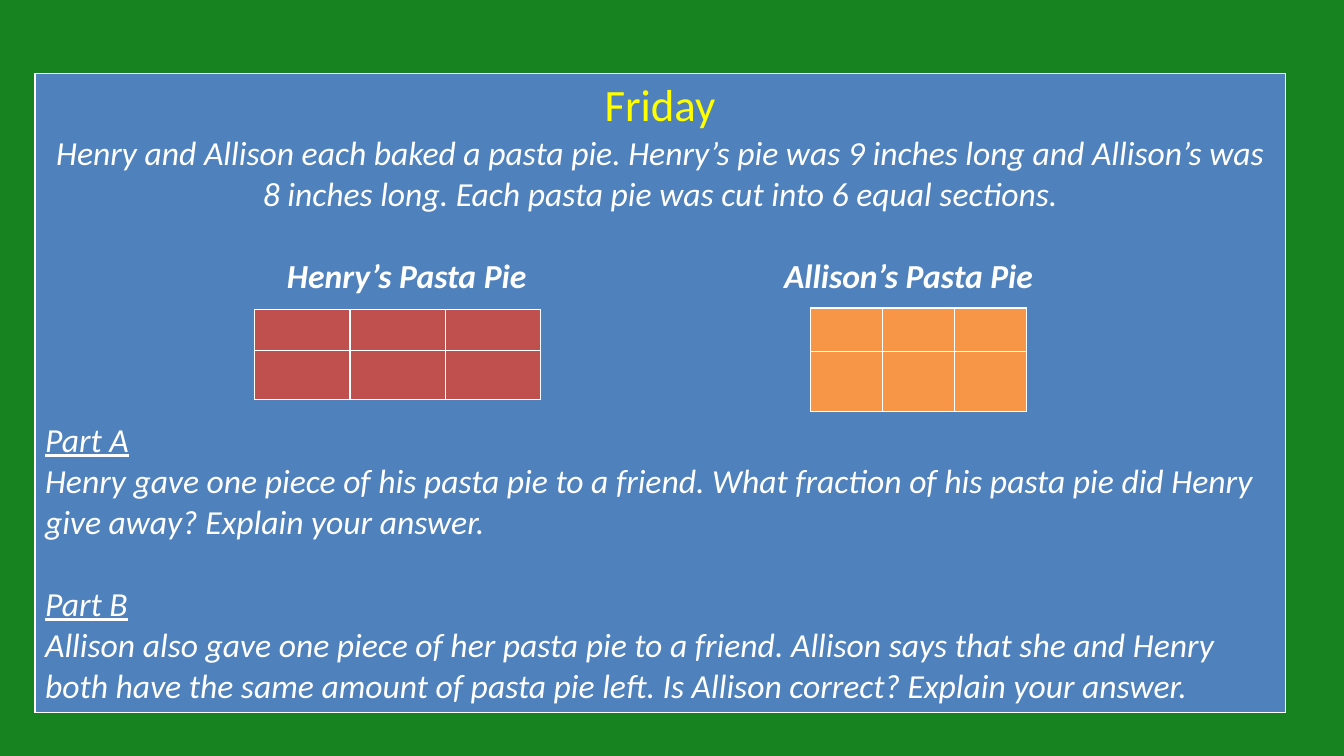
from lxml import etree
from pptx import Presentation
from pptx.dml.color import RGBColor
from pptx.enum import text
from pptx.oxml import ns
from pptx.util import Pt

COLORS = {
    "background": "168220",
    "panel": "4F81BD",
    "title": "FFFF00",
    "white": "FFFFFF",
    "henry": "C0504D",
    "allison": "F79646",
}
FONT = "Calibri"
LINE = 29.3  # height of one line of 24 pt text
CENTER = text.PP_ALIGN.CENTER
LEFT = text.PP_ALIGN.LEFT


def rgb(name):
    return RGBColor.from_string(COLORS[name])


def add_borders(cell):
    tcPr = cell._tc.get_or_add_tcPr()
    for side in ("a:lnL", "a:lnR", "a:lnT", "a:lnB"):
        ln = etree.SubElement(tcPr, ns.qn(side), w=str(Pt(1)))
        fill = etree.SubElement(ln, ns.qn("a:solidFill"))
        etree.SubElement(fill, ns.qn("a:srgbClr"), val=COLORS["white"])


def add_grid(slide, left, top, col_width, n_cols, row_heights, color):
    """Add a table of equal columns in one colour with white rules."""
    frame = slide.shapes.add_table(
        len(row_heights), n_cols, Pt(left), Pt(top),
        Pt(col_width * n_cols), Pt(sum(row_heights)))
    table = frame.table
    table.first_row = table.horz_banding = False
    for col in table.columns:
        col.width = Pt(col_width)
    for row, height in zip(table.rows, row_heights):
        row.height = Pt(height)
    for cell in table.iter_cells():
        add_borders(cell)
        cell.fill.solid()
        cell.fill.fore_color.rgb = rgb(color)
    return table


def add_tabs(p, positions):
    tabs = etree.SubElement(p._p.get_or_add_pPr(), ns.qn("a:tabLst"))
    for pos in positions:
        etree.SubElement(tabs, ns.qn("a:tab"), pos=str(Pt(pos)), algn="l")


def write(p, content, align=LEFT, size=24, color="white", italic=True,
          bold=False, underline=False, lines_before=0, tabs=()):
    if tabs:
        add_tabs(p, tabs)
    p.text = content
    p.alignment = align
    if lines_before:
        p.space_before = Pt(lines_before * LINE)
    for r in p.runs:
        f = r.font
        f.name, f.size, f.color.rgb = FONT, Pt(size), rgb(color)
        f.italic, f.bold, f.underline = italic, bold, underline


def main():
    prs = Presentation()
    prs.slide_width, prs.slide_height = Pt(960), Pt(540)
    slide = prs.slides.add_slide(prs.slide_layouts[6])
    slide.background.fill.solid()
    slide.background.fill.fore_color.rgb = rgb("background")

    # Problem panel
    panel = add_grid(slide, 25, 52.4, 893, 1, [456.5], "panel")
    tf = panel.cell(0, 0).text_frame
    write(tf.paragraphs[0], "Friday", CENTER, size=32, color="title",
          italic=False)
    write(tf.add_paragraph(),
          "Henry and Allison each baked a pasta pie. Henry’s pie was 9 inches "
          "long and Allison’s was 8 inches long. Each pasta pie was cut into "
          "6 equal sections.", CENTER)
    write(tf.add_paragraph(), "\tHenry’s Pasta Pie\tAllison’s Pasta Pie",
          bold=True, lines_before=1, tabs=(172.8, 527.8))

    # Questions
    questions = [
        ("Part A", 3,
         "Henry gave one piece of his pasta pie to a friend. What fraction of "
         "his pasta pie did Henry give away? Explain your answer."),
        ("Part B", 1,
         "Allison also gave one piece of her pasta pie to a friend. Allison "
         "says that she and Henry both have the same amount of pasta pie "
         "left. Is Allison correct? Explain your answer."),
    ]
    for part, gap, question in questions:
        write(tf.add_paragraph(), part, underline=True, lines_before=gap)
        write(tf.add_paragraph(), question)

    # Pasta pies, six sections each
    add_grid(slide, 182, 221, 68, 3, [29.3, 35], "henry")
    add_grid(slide, 579, 220, 51.4, 3, [31, 43], "allison")

    prs.save("out.pptx")


if __name__ == "__main__":
    main()
